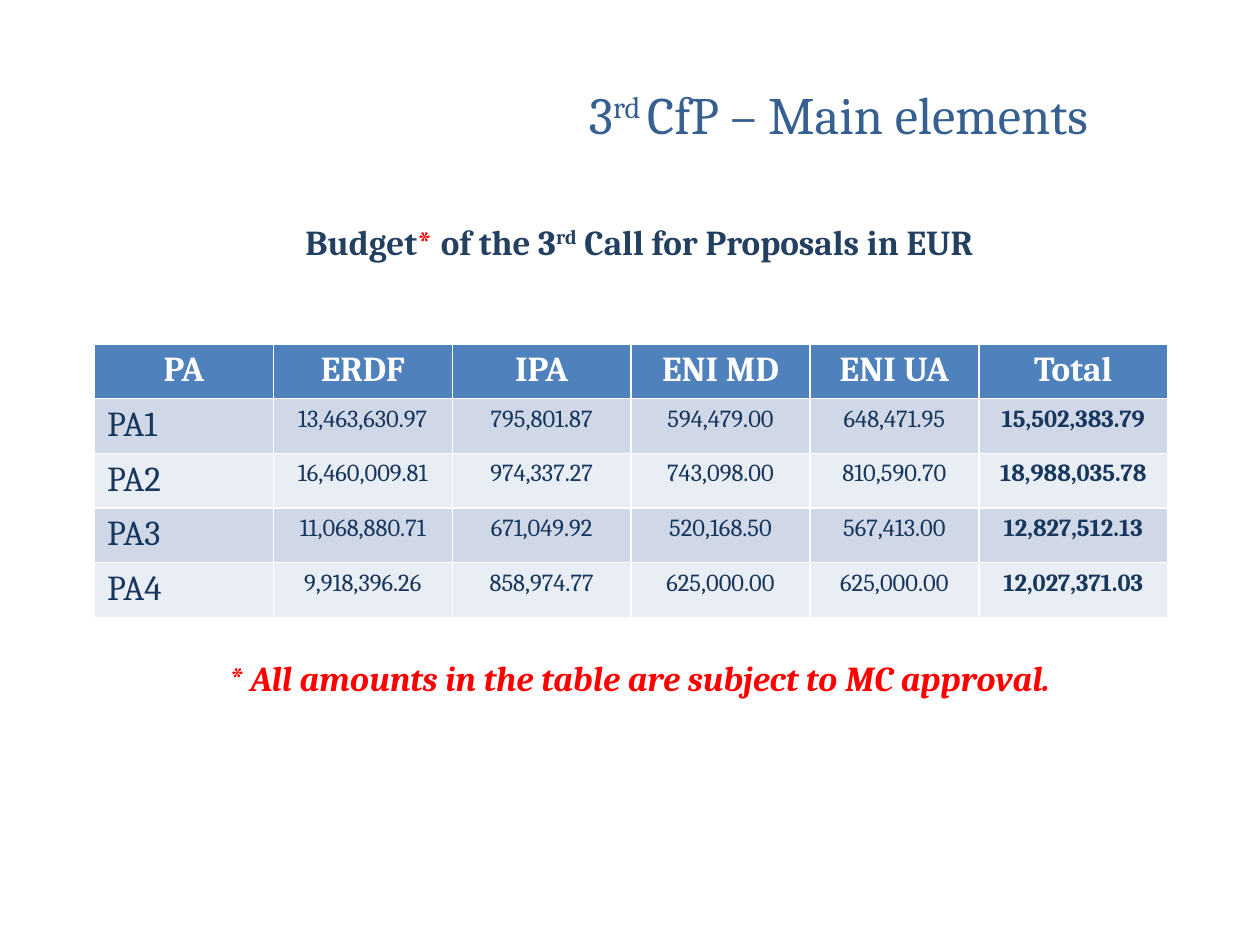
from pptx import Presentation
from pptx.dml.color import RGBColor
from pptx.enum.text import MSO_ANCHOR, MSO_AUTO_SIZE, PP_ALIGN
from pptx.util import Inches, Pt

FONT = "Cambria"
TITLE_BLUE = RGBColor(0x37, 0x60, 0x92)
HEADING_NAVY = RGBColor(0x24, 0x40, 0x61)
CELL_NAVY = RGBColor(0x17, 0x37, 0x5E)
HEADER_BLUE = RGBColor(0x4F, 0x81, 0xBD)
BANDS = RGBColor(0xD0, 0xD8, 0xE8), RGBColor(0xE9, 0xED, 0xF4)
WHITE = RGBColor(0xFF, 0xFF, 0xFF)
RED = RGBColor(0xFF, 0x00, 0x00)

TITLE = [("3", {}), ("rd ", {"raised": True}), ("CfP – Main elements", {})]
HEADING = [
    ("Budget", {}),
    ("*", {"color": RED}),
    (" of the 3", {}),
    ("rd", {"raised": True}),
    (" Call for Proposals in EUR", {}),
]
NOTE = "* All amounts in the table are subject to MC approval."
COLUMNS = [("PA", 1.42), ("ERDF", 1.42), ("IPA", 1.42),
           ("ENI MD", 1.42), ("ENI UA", 1.34), ("Total", 1.5)]
BUDGET = [
    ("PA1", "13,463,630.97", "795,801.87", "594,479.00", "648,471.95", "15,502,383.79"),
    ("PA2", "16,460,009.81", "974,337.27", "743,098.00", "810,590.70", "18,988,035.78"),
    ("PA3", "11,068,880.71", "671,049.92", "520,168.50", "567,413.00", "12,827,512.13"),
    ("PA4", "9,918,396.26", "858,974.77", "625,000.00", "625,000.00", "12,027,371.03"),
]
ROW_HEIGHT = 0.42


def write(paragraph, text, size=20, color=HEADING_NAVY, bold=False, italic=False,
          raised=False, align=PP_ALIGN.CENTER):
    paragraph.alignment = align
    run = paragraph.add_run()
    run.text = text
    font = run.font
    font.name, font.size, font.bold, font.italic = FONT, Pt(size), bold, italic
    font.color.rgb = color
    if raised:
        run._r.get_or_add_rPr().set("baseline", "30000")


def main():
    deck = Presentation()
    deck.slide_width, deck.slide_height = Inches(10), Inches(7.5)
    slide = deck.slides.add_slide(deck.slide_layouts[5])

    title = slide.shapes.title
    title.left, title.top = Inches(3.78), Inches(0.6)
    title.width, title.height = Inches(5.75), Inches(0.79)
    title.text_frame.vertical_anchor = MSO_ANCHOR.TOP
    title.text_frame.auto_size = MSO_AUTO_SIZE.NONE
    for text, style in TITLE:
        write(title.text_frame.paragraphs[0], text, size=30, color=TITLE_BLUE, **style)

    body = slide.shapes.add_textbox(Inches(0.51), Inches(1.7), Inches(9.13), Inches(5.51)).text_frame
    body.word_wrap = True
    for text, style in HEADING:
        write(body.paragraphs[0], text, bold=True, **style)
    note = body.add_paragraph()
    note.space_before = Pt(225)
    write(note, NOTE, color=RED, bold=True, italic=True)

    rows = [[name for name, _ in COLUMNS], *BUDGET]
    table = slide.shapes.add_table(
        len(rows), len(COLUMNS), Inches(0.75), Inches(2.73),
        Inches(sum(width for _, width in COLUMNS)), Inches(ROW_HEIGHT * len(rows))).table
    for column, (_, width) in zip(table.columns, COLUMNS):
        column.width = Inches(width)
    for r, values in enumerate(rows):
        table.rows[r].height = Inches(ROW_HEIGHT)
        for c, value in enumerate(values):
            cell = table.cell(r, c)
            cell.fill.solid()
            cell.fill.fore_color.rgb = BANDS[(r - 1) % 2] if r else HEADER_BLUE
            header, label, total = r == 0, c == 0, c == len(COLUMNS) - 1
            write(cell.text_frame.paragraphs[0], value,
                  size=20 if header or label else 14,
                  color=WHITE if header else CELL_NAVY,
                  bold=header or total,
                  align=PP_ALIGN.LEFT if label and not header else PP_ALIGN.CENTER)

    deck.save("out.pptx")


if __name__ == "__main__":
    main()
